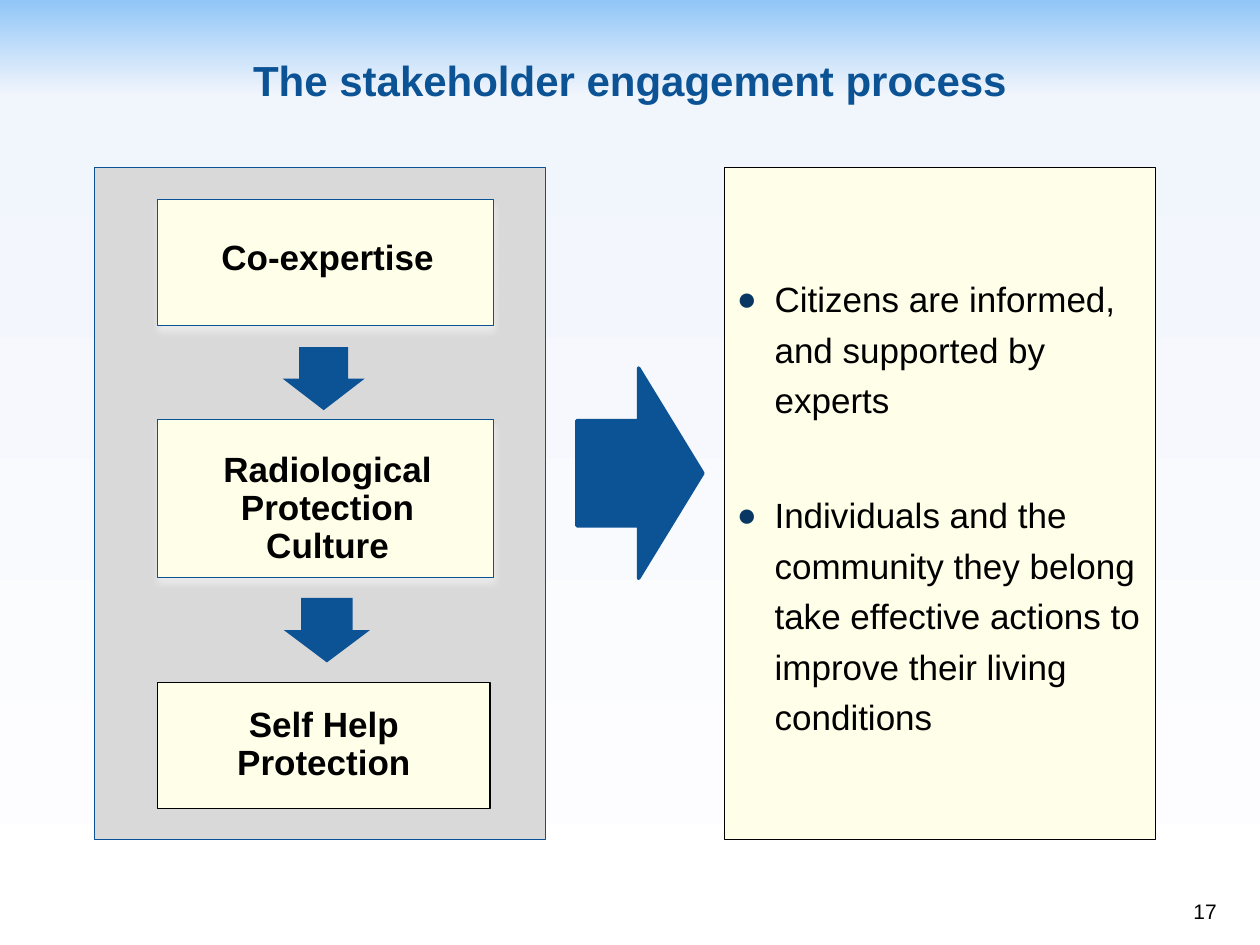
import copy
import dataclasses
import typing

import lxml.etree
import pptx
import pptx.dml.color
import pptx.enum.shapes
import pptx.enum.text
import pptx.oxml.ns
import pptx.util

Cm = pptx.util.Cm
Pt = pptx.util.Pt
Kind = pptx.enum.shapes.MSO_SHAPE
Align = pptx.enum.text.PP_ALIGN
Anchor = pptx.enum.text.MSO_ANCHOR
qn = pptx.oxml.ns.qn

COLORS = {
    "title": "0B5394", "arrow": "0B5394", "edge": "095295",
    "cream": "FFFEE8", "panel": "D9D9D9", "text": "000000",
    "bullet": "083763", "glow": "FFFFFF",
}
SKY = [(0, "91C6F7"), (0.1, "F1F5FC"), (1, "FFFFFF")]


@dataclasses.dataclass
class Area:
    left: float
    top: float
    width: float
    height: float

    def cm(self) -> list:
        return [Cm(n) for n in (self.left, self.top, self.width, self.height)]


@dataclasses.dataclass
class Box:
    area: Area
    fill: str = "cream"
    line: str = "edge"
    glow: bool = False


@dataclasses.dataclass
class Arrow:
    area: Area
    ratios: tuple
    turn: int = 90
    line: float = 0


@dataclasses.dataclass
class Label:
    text: str
    area: Area


BOXES = [
    Box(Area(1.9, 3.38, 9.1, 13.54), "panel"),
    Box(Area(3.18, 4.02, 6.77, 2.54), glow=True),
    Box(Area(3.18, 8.46, 6.77, 3.18), glow=True),
    Box(Area(3.18, 13.76, 6.7, 2.54), line="text"),
]
ARROWS = [
    Arrow(Area(11.63, 7.42, 2.54, 4.24), (0.5, 0.51), 0, 2),
    Arrow(Area(5.89, 6.81, 1.27, 1.65), (0.6, 0.5)),
    Arrow(Area(5.94, 11.84, 1.3, 1.73), (0.6, 0.5)),
]
LABELS = [
    Label("Co-expertise", Area(3.28, 4.11, 6.65, 2.24)),
    Label("Radiological Protection Culture", Area(3.28, 8.89, 6.65, 2.74)),
    Label("Self Help Protection", BOXES[-1].area),
]
POINTS = [
    "Citizens are informed, and supported by experts",
    "Individuals and the community they belong take effective actions to improve their living conditions",
]


def rgb(name: str) -> pptx.dml.color.RGBColor:
    return pptx.dml.color.RGBColor.from_string(COLORS[name])


def place(shape: typing.Any, area: Area) -> None:
    shape.left, shape.top, shape.width, shape.height = area.cm()


def paint(shape: typing.Any, fill: str, line: str, width: float) -> None:
    shape.fill.solid()
    shape.fill.fore_color.rgb = rgb(fill)
    if width:
        shape.line.color.rgb = rgb(line)
        shape.line.width = Pt(width)
    else:
        shape.line.fill.background()


def write(par: typing.Any, text: str, size: float, color: str = "text", bold: bool = False) -> None:
    run = par.add_run()
    run.text = text
    run.font.name = "Arial"
    run.font.size = Pt(size)
    run.font.bold = bold
    run.font.color.rgb = rgb(color)


def frame_up(shape: typing.Any, anchor: typing.Any, inset: typing.Optional[float] = None) -> typing.Any:
    frame = shape.text_frame
    frame.word_wrap = True
    frame.auto_size = pptx.enum.text.MSO_AUTO_SIZE.NONE
    frame.vertical_anchor = anchor
    if inset is not None:
        frame.margin_left = frame.margin_right = Cm(inset)
        frame.margin_top = frame.margin_bottom = Cm(inset)
    return frame


def add_sky(slide: typing.Any) -> None:
    fill = slide.background.fill
    fill.gradient()
    fill.gradient_angle = 270
    stops = slide.element.find(".//" + qn("a:gsLst"))
    stops.insert(1, copy.deepcopy(stops[0]))
    for stop, (spot, color) in zip(fill.gradient_stops, SKY):
        stop.position = spot
        stop.color.rgb = pptx.dml.color.RGBColor.from_string(color)


def add_glow(shape: typing.Any) -> None:
    effects = shape.element.spPr.find(qn("a:effectLst"))
    glow = lxml.etree.SubElement(effects, qn("a:outerShdw"), blurRad=str(Pt(4.5)),
                                 dist=str(Pt(3)), dir="5400000", rotWithShape="0")
    color = lxml.etree.SubElement(glow, qn("a:srgbClr"), val=COLORS["glow"])
    lxml.etree.SubElement(color, qn("a:alpha"), val="48000")


def add_box(slide: typing.Any, box: Box) -> None:
    shape = slide.shapes.add_shape(Kind.RECTANGLE, *box.area.cm())
    shape.shadow.inherit = False
    paint(shape, box.fill, box.line, 0.75)
    if box.glow:
        add_glow(shape)


def add_arrow(slide: typing.Any, arrow: Arrow) -> None:
    shape = slide.shapes.add_shape(Kind.RIGHT_ARROW, *arrow.area.cm())
    shape.shadow.inherit = False
    shape.rotation = arrow.turn
    for place_no, ratio in enumerate(arrow.ratios):
        shape.adjustments[place_no] = ratio
    paint(shape, "arrow", "arrow", arrow.line)


def add_label(slide: typing.Any, label: Label) -> None:
    shape = slide.shapes.add_textbox(*label.area.cm())
    par = frame_up(shape, Anchor.MIDDLE, 0.28).paragraphs[0]
    par.alignment = Align.CENTER
    par.line_spacing = 0.9
    write(par, label.text, 20, bold=True)


def add_bullet(par: typing.Any) -> None:
    props = par._p.get_or_add_pPr()
    props.set("marL", str(Cm(0.76)))
    props.set("indent", str(Cm(-0.76)))
    color = lxml.etree.SubElement(props, qn("a:buClr"))
    lxml.etree.SubElement(color, qn("a:srgbClr"), val=COLORS["bullet"])
    lxml.etree.SubElement(props, qn("a:buSzPct"), val="95000")
    lxml.etree.SubElement(props, qn("a:buFont"), typeface="Arial")
    lxml.etree.SubElement(props, qn("a:buChar"), char="●")


def fill_title(shape: typing.Any) -> None:
    place(shape, Area(0, 0.43, 25.4, 2.34))
    par = frame_up(shape, Anchor.MIDDLE, 0).paragraphs[0]
    par.alignment = Align.CENTER
    write(par, "The stakeholder engagement process", 24, "title", True)


def fill_list(shape: typing.Any) -> None:
    place(shape, Area(14.6, 3.38, 8.69, 13.54))
    paint(shape, "cream", "text", 0.75)
    frame = frame_up(shape, Anchor.MIDDLE)
    for order, point in enumerate(POINTS):
        par = frame.add_paragraph() if order else frame.paragraphs[0]
        add_bullet(par)
        par.line_spacing = 1.2
        par.space_before = Pt(37 if order else 0)
        write(par, point, 20)


def main() -> None:
    deck = pptx.Presentation()
    deck.slide_width, deck.slide_height = Cm(25.4), Cm(19.05)
    slide = deck.slides.add_slide(deck.slide_layouts[1])
    add_sky(slide)
    fill_title(slide.shapes.title)
    fill_list(slide.placeholders[1])
    for draw, parts in ((add_box, BOXES), (add_arrow, ARROWS), (add_label, LABELS)):
        for part in parts:
            draw(slide, part)
    corner = slide.shapes.add_textbox(*Area(19.5, 17.48, 5.28, 1.27).cm())
    par = frame_up(corner, Anchor.BOTTOM).paragraphs[0]
    par.alignment = Align.RIGHT
    write(par, "17", 12)
    deck.save("out.pptx")


if __name__ == "__main__":
    main()
